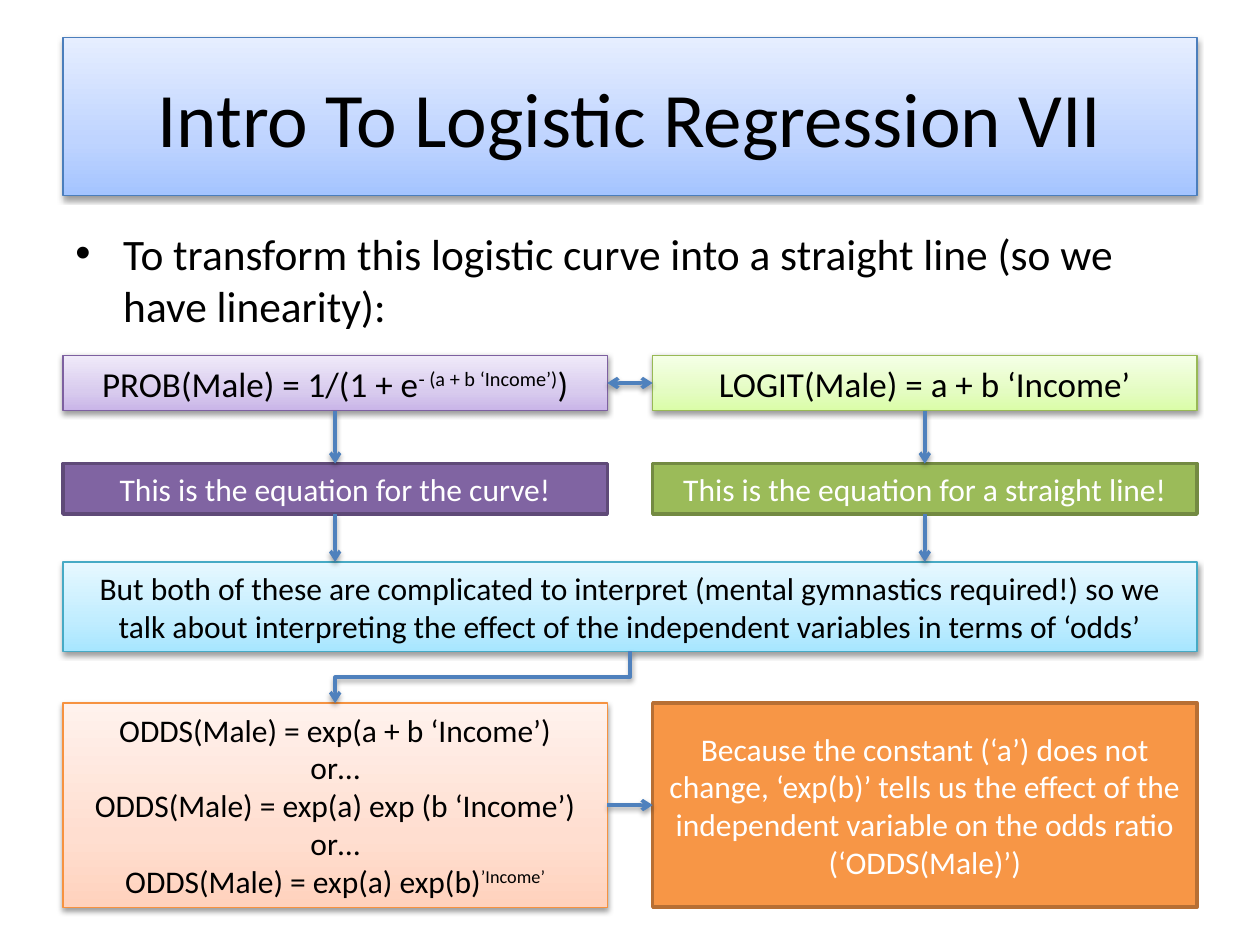
from copy import deepcopy

from lxml.etree import SubElement
from pptx import Presentation
from pptx.dml.color import RGBColor
from pptx.enum.shapes import MSO_CONNECTOR, MSO_SHAPE
from pptx.enum.text import MSO_ANCHOR, PP_ALIGN
from pptx.oxml.ns import qn
from pptx.util import Inches, Pt

COLORS = {
    "black": "000000",
    "white": "FFFFFF",
    "arrow": "4F81BD",
    "purple": "8064A2",
    "purple_edge": "5F4A78",
    "green": "9BBB59",
    "green_edge": "738A42",
    "orange": "F79646",
    "orange_edge": "B76F34",
}
GRADIENTS = {
    "blue": ("A4C4FF", "BFD4FF", "E6EEFF", "4B7EBC"),
    "purple": ("C9B5E8", "D8CBEE", "F0EAF9", "7D60A0"),
    "green": ("DAFDA7", "E4FCC2", "F5FFE7", "98B955"),
    "aqua": ("A7E6FF", "C1EDFF", "E7F8FF", "46AAC5"),
    "orange": ("FFD2BD", "FFDED0", "FFF2ED", "F69240"),
}
TOP, LEFT, BOTTOM, RIGHT = range(4)
MARGIN, FULL, HALF = 0.5, 9, 4.32
SECOND = MARGIN + FULL - HALF


class LogisticSlide:
    font = "Calibri"

    def __init__(self, presentation):
        self.slide = presentation.slides.add_slide(presentation.slide_layouts[6])

    def rgb(self, color):
        return RGBColor.from_string(color)

    def fill_text(self, frame, lines, size, color, align=PP_ALIGN.CENTER):
        frame.word_wrap = True
        for number, line in enumerate(lines):
            paragraph = frame.paragraphs[0] if number == 0 else frame.add_paragraph()
            paragraph.alignment = align
            base, *pieces = line.split("^")
            paragraph.text = base
            for piece in pieces:
                paragraph.add_run().text = piece
            for order, run in enumerate(paragraph.runs):
                run.font.name = self.font
                run.font.size = Pt(size)
                run.font.color.rgb = self.rgb(color)
                if order % 2:
                    run.font._element.set("baseline", "30000")

    def add_shadow(self, properties):
        effects = properties.find(qn("a:effectLst"))
        if effects is None:
            effects = SubElement(properties, qn("a:effectLst"))
        shadow = SubElement(effects, qn("a:outerShdw"), blurRad="40000",
                            dist="20000", dir="5400000", rotWithShape="0")
        black = SubElement(shadow, qn("a:srgbClr"), val=COLORS["black"])
        SubElement(black, qn("a:alpha"), val="38000")

    def rectangle(self, left, top, width, height, edge, weight):
        shape = self.slide.shapes.add_shape(
            MSO_SHAPE.RECTANGLE, Inches(left), Inches(top), Inches(width), Inches(height))
        shape.line.color.rgb = self.rgb(edge)
        shape.line.width = Pt(weight)
        shape.shadow.inherit = False
        shape.text_frame.vertical_anchor = MSO_ANCHOR.MIDDLE
        return shape

    def gradient_box(self, left, top, width, height, theme, lines, size=18):
        *tones, edge = GRADIENTS[theme]
        shape = self.rectangle(left, top, width, height, edge, 0.75)
        shape.fill.gradient()
        shape.fill.gradient_angle = 90
        properties = shape._element.spPr
        stop_list = properties.find(".//" + qn("a:gsLst"))
        stop_list.append(deepcopy(stop_list[0]))
        for stop, tone, position in zip(shape.fill.gradient_stops, tones, (0, 0.35, 1)):
            stop.color.rgb = self.rgb(tone)
            stop.position = position
        self.add_shadow(properties)
        self.fill_text(shape.text_frame, lines, size, COLORS["black"])
        return shape

    def solid_box(self, left, top, width, height, theme, line):
        shape = self.rectangle(left, top, width, height, COLORS[theme + "_edge"], 2)
        shape.fill.solid()
        shape.fill.fore_color.rgb = self.rgb(COLORS[theme])
        self.fill_text(shape.text_frame, [line], 18, COLORS["white"])
        return shape

    def bullet(self, left, top, width, height, line, size):
        box = self.slide.shapes.add_textbox(
            Inches(left), Inches(top), Inches(width), Inches(height))
        self.fill_text(box.text_frame, [line], size, COLORS["black"], PP_ALIGN.LEFT)
        paragraph = box.text_frame.paragraphs[0]
        paragraph.space_before = Pt(5)
        properties = paragraph._p.get_or_add_pPr()
        properties.set("marL", str(Inches(0.38)))
        properties.set("indent", str(-Inches(0.38)))
        SubElement(properties, qn("a:buFont"), typeface="Arial")
        SubElement(properties, qn("a:buChar"), char="•")

    def style_arrow(self, connector, both_ends=False):
        connector.line.color.rgb = self.rgb(COLORS["arrow"])
        connector.line.width = Pt(2)
        properties = connector._element.spPr
        outline = properties.find(qn("a:ln"))
        if both_ends:
            SubElement(outline, qn("a:headEnd"), type="arrow")
        SubElement(outline, qn("a:tailEnd"), type="arrow")
        self.add_shadow(properties)

    def arrow(self, start, end, both_ends=False):
        connector = self.slide.shapes.add_connector(
            MSO_CONNECTOR.STRAIGHT, *start, *end)
        self.style_arrow(connector, both_ends)
        return connector

    def across(self, source, target, both_ends=False):
        y = source.top + source.height // 2
        connector = self.arrow((source.left + source.width, y), (target.left, y), both_ends)
        connector.begin_connect(source, RIGHT)
        connector.end_connect(target, LEFT)

    def down(self, source, target):
        x = source.left + source.width // 2
        connector = self.arrow((x, source.top + source.height), (x, target.top))
        connector.begin_connect(source, BOTTOM)
        if target.left == source.left and target.width == source.width:
            connector.end_connect(target, TOP)

    def elbow_down(self, source, target):
        start_x = source.left + source.width // 2
        start_y = source.top + source.height
        end_x = target.left + target.width // 2
        connector = self.slide.shapes.add_connector(
            MSO_CONNECTOR.ELBOW, start_x, start_y, end_x, target.top)
        connector.begin_connect(source, BOTTOM)
        connector.end_connect(target, TOP)
        run, drop = start_x - end_x, target.top - start_y
        transform = connector._element.spPr.find(qn("a:xfrm"))
        transform.attrib.clear()
        transform.set("rot", "5400000")
        connector.left = (start_x + end_x - drop) // 2
        connector.top = (start_y + target.top - run) // 2
        connector.width, connector.height = drop, run
        self.style_arrow(connector)


def main():
    presentation = Presentation()
    presentation.slide_width = Inches(10)
    presentation.slide_height = Inches(7.5)
    page = LogisticSlide(presentation)

    page.gradient_box(MARGIN, 0.3, FULL, 1.25, "blue",
                      ["Intro To Logistic Regression VII"], 44)
    page.bullet(MARGIN, 1.75, FULL, 0.8,
                "To transform this logistic curve into a straight line "
                "(so we have linearity):", 24.8)
    probability = page.gradient_box(
        MARGIN, 2.82, HALF, 0.44, "purple",
        ["PROB(Male) = 1/(1 + e^- (a + b ‘Income’)^)"], 20)
    logit = page.gradient_box(
        SECOND, 2.82, HALF, 0.44, "green", ["LOGIT(Male) = a + b ‘Income’"], 20)
    curve = page.solid_box(MARGIN, 3.68, HALF, 0.4, "purple",
                           "This is the equation for the curve!")
    straight = page.solid_box(SECOND, 3.68, HALF, 0.4, "green",
                              "This is the equation for a straight line!")
    interpretation = page.gradient_box(
        MARGIN, 4.46, FULL, 0.71, "aqua",
        ["But both of these are complicated to interpret (mental gymnastics required!) "
         "so we talk about interpreting the effect of the independent variables "
         "in terms of ‘odds’"])
    odds = page.gradient_box(
        MARGIN, 5.58, HALF, 1.62, "orange",
        ["ODDS(Male) = exp(a + b ‘Income’)", "or…",
         "ODDS(Male) = exp(a) exp (b ‘Income’)", "or…",
         "ODDS(Male) = exp(a) exp(b)^’Income’"])
    effect = page.solid_box(
        SECOND, 5.58, HALF, 1.62, "orange",
        "Because the constant (‘a’) does not change, ‘exp(b)’ tells us the effect of "
        "the independent variable on the odds ratio (‘ODDS(Male)’)")

    page.across(probability, logit, both_ends=True)
    for equation, meaning in ((probability, curve), (logit, straight)):
        page.down(equation, meaning)
        page.down(meaning, interpretation)
    page.elbow_down(interpretation, odds)
    page.across(odds, effect)

    presentation.save("out.pptx")


if __name__ == "__main__":
    main()
